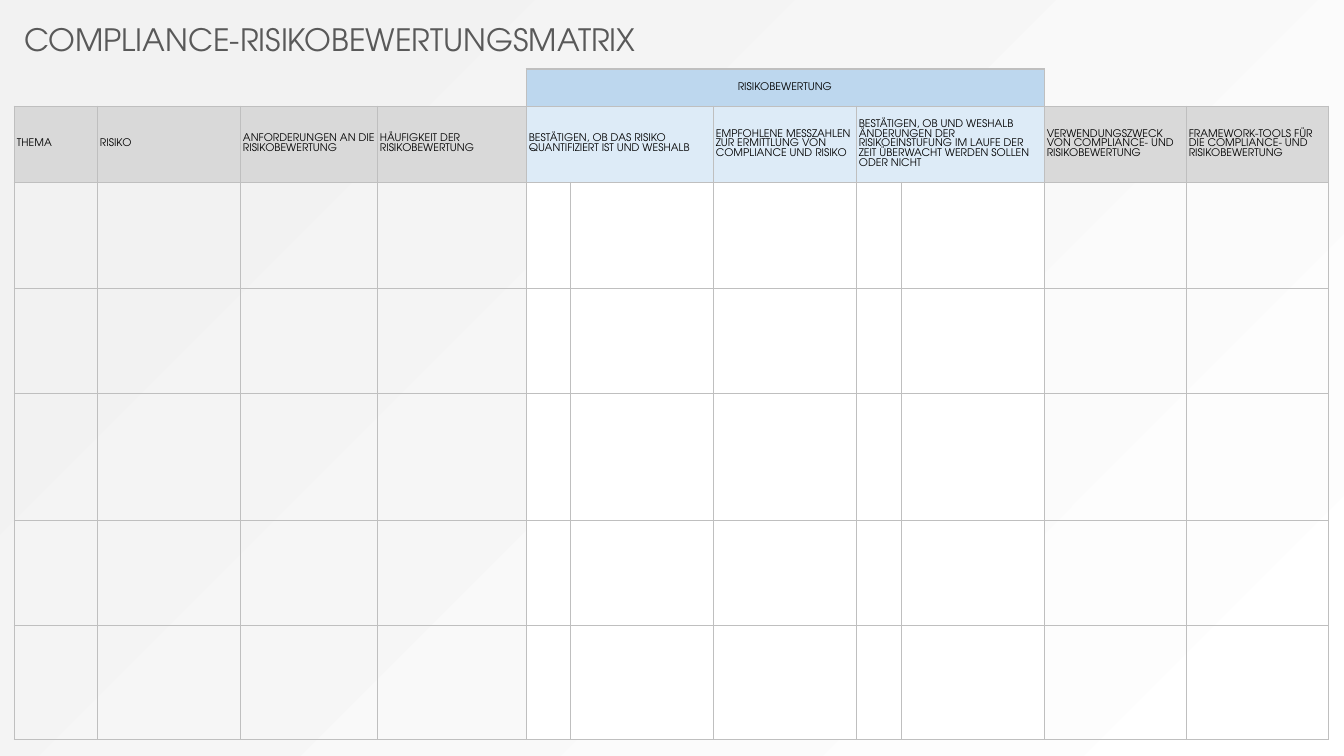
from dataclasses import dataclass
from itertools import product

from lxml.etree import SubElement
from pptx import Presentation
from pptx.dml.color import RGBColor
from pptx.enum.text import MSO_ANCHOR as Anchor, PP_ALIGN as Align
from pptx.oxml.ns import qn
from pptx.util import Pt

TITLE = "COMPLIANCE-RISIKOBEWERTUNGSMATRIX"
GROUP = "RISIKOBEWERTUNG"
# heading, widths in px of the columns below it, part of the assessment group
TOPICS = [
    ("THEMA", [83], False),
    ("RISIKO", [143], False),
    ("ANFORDERUNGEN AN DIE RISIKOBEWERTUNG", [137], False),
    ("HÄUFIGKEIT DER RISIKOBEWERTUNG", [149], False),
    ("BESTÄTIGEN, OB DAS RISIKO QUANTIFIZIERT IST UND WESHALB", [44, 143], True),
    ("EMPFOHLENE MESSZAHLEN ZUR ERMITTLUNG VON COMPLIANCE UND RISIKO", [143], True),
    ("BESTÄTIGEN, OB UND WESHALB ÄNDERUNGEN DER RISIKOEINSTUFUNG IM LAUFE DER "
     "ZEIT ÜBERWACHT WERDEN SOLLEN ODER NICHT", [45, 143], True),
    ("VERWENDUNGSZWECK VON COMPLIANCE- UND RISIKOBEWERTUNG", [142], False),
    ("FRAMEWORK-TOOLS FÜR DIE COMPLIANCE- UND RISIKOBEWERTUNG", [143], False),
]
ROW_HEIGHTS = [37, 76, 106, 105, 127, 105, 114]
GROUP_ROW, HEADING_ROW, FIRST_ENTRY_ROW = 0, 1, 2


@dataclass(frozen=True)
class Theme:
    font: str = "TeX Gyre Adventor"
    title_size: float = 22
    cell_size: float = 7.5
    title: str = "595959"
    text: str = "000000"
    border: str = "BFBFBF"
    group: str = "BDD7EE"
    group_heading: str = "DDEBF7"
    heading: str = "D9D9D9"
    entry: str = "FFFFFF"
    light: str = "FFFFFF"
    shade: str = "F2F2F2"


THEME = Theme()
NO_STYLE = "{2D5ABB26-0587-4C30-8999-92F81FD0307C}"


def px(length):
    return round(length * 914400 / 100.8)


def rgb(code):
    return RGBColor.from_string(code)


def set_font(paragraph, size, color):
    font = paragraph.font
    font.name, font.size = THEME.font, Pt(size)
    font.color.rgb = rgb(color)


def paint(cell, color):
    cell.fill.solid()
    cell.fill.fore_color.rgb = rgb(color)


def write(cell, text, align=Align.LEFT, indent=3):
    cell.text = text
    cell.vertical_anchor = Anchor.MIDDLE
    cell.margin_left = px(indent)
    cell.margin_right = cell.margin_top = cell.margin_bottom = 0
    paragraph = cell.text_frame.paragraphs[0]
    paragraph.alignment = align
    set_font(paragraph, THEME.cell_size, THEME.text)


def add_borders(cell, widths):
    """Draw cell edges; widths maps L, R, T, B (in that order) to points."""
    properties = cell._tc.get_or_add_tcPr()
    for position, (edge, width) in enumerate(widths.items()):
        line = SubElement(properties, qn(f"a:ln{edge}"), w=str(Pt(width)))
        fill = SubElement(line, qn("a:solidFill"))
        SubElement(fill, qn("a:srgbClr"), val=THEME.border)
        properties.insert(position, line)


def add_background(slide):
    fill = slide.background.fill
    fill.gradient()
    fill.gradient_angle = 135
    for stop, color, position in zip(
            fill.gradient_stops, (THEME.light, THEME.shade), (0, 0.87)):
        stop.color.rgb = rgb(color)
        stop.position = position


def add_title(slide):
    title = slide.shapes.title
    title.left, title.top, title.width, title.height = map(px, (14, 16, 814, 47))
    title.text = TITLE
    title.text_frame.vertical_anchor = Anchor.MIDDLE
    paragraph = title.text_frame.paragraphs[0]
    paragraph.alignment = Align.LEFT
    set_font(paragraph, THEME.title_size, THEME.title)


def add_matrix(slide):
    widths = [width for _, parts, _ in TOPICS for width in parts]
    in_group = [grouped for _, parts, grouped in TOPICS for _ in parts]
    first = in_group.index(True)
    last = first + sum(in_group) - 1

    matrix = slide.shapes.add_table(
        len(ROW_HEIGHTS), len(widths), px(14), px(69),
        px(sum(widths)), px(sum(ROW_HEIGHTS))).table
    matrix._tbl.tblPr.find(qn("a:tableStyleId")).text = NO_STYLE
    matrix.first_row = matrix.horz_banding = False
    for column, width in zip(matrix.columns, widths):
        column.width = px(width)
    for row, height in zip(matrix.rows, ROW_HEIGHTS):
        row.height = px(height)

    for row, column in product(range(len(ROW_HEIGHTS)), range(len(widths))):
        cell = matrix.cell(row, column)
        write(cell, "")
        if row >= FIRST_ENTRY_ROW and in_group[column]:
            paint(cell, THEME.entry)
        if row != GROUP_ROW:
            add_borders(cell, dict.fromkeys("LRTB", 0.5))
        elif in_group[column]:
            left = {"L": 0.5} if column == first else {}
            add_borders(cell, {**left, "T": 1, "B": 0.5})
        else:
            right = {"R": 0.5} if column == first - 1 else {}
            add_borders(cell, {**right, "B": 0.5})

    group = matrix.cell(GROUP_ROW, first)
    group.merge(matrix.cell(GROUP_ROW, last))
    write(group, GROUP, Align.CENTER, indent=0)
    paint(group, THEME.group)

    column = 0
    for heading, parts, grouped in TOPICS:
        cell = matrix.cell(HEADING_ROW, column)
        if len(parts) > 1:
            cell.merge(matrix.cell(HEADING_ROW, column + len(parts) - 1))
        write(cell, heading)
        paint(cell, THEME.group_heading if grouped else THEME.heading)
        column += len(parts)


def main():
    deck = Presentation()
    deck.slide_width, deck.slide_height = px(1344), px(756)
    slide = deck.slides.add_slide(deck.slide_layouts[5])
    add_background(slide)
    add_title(slide)
    add_matrix(slide)
    deck.save("out.pptx")


if __name__ == "__main__":
    main()
